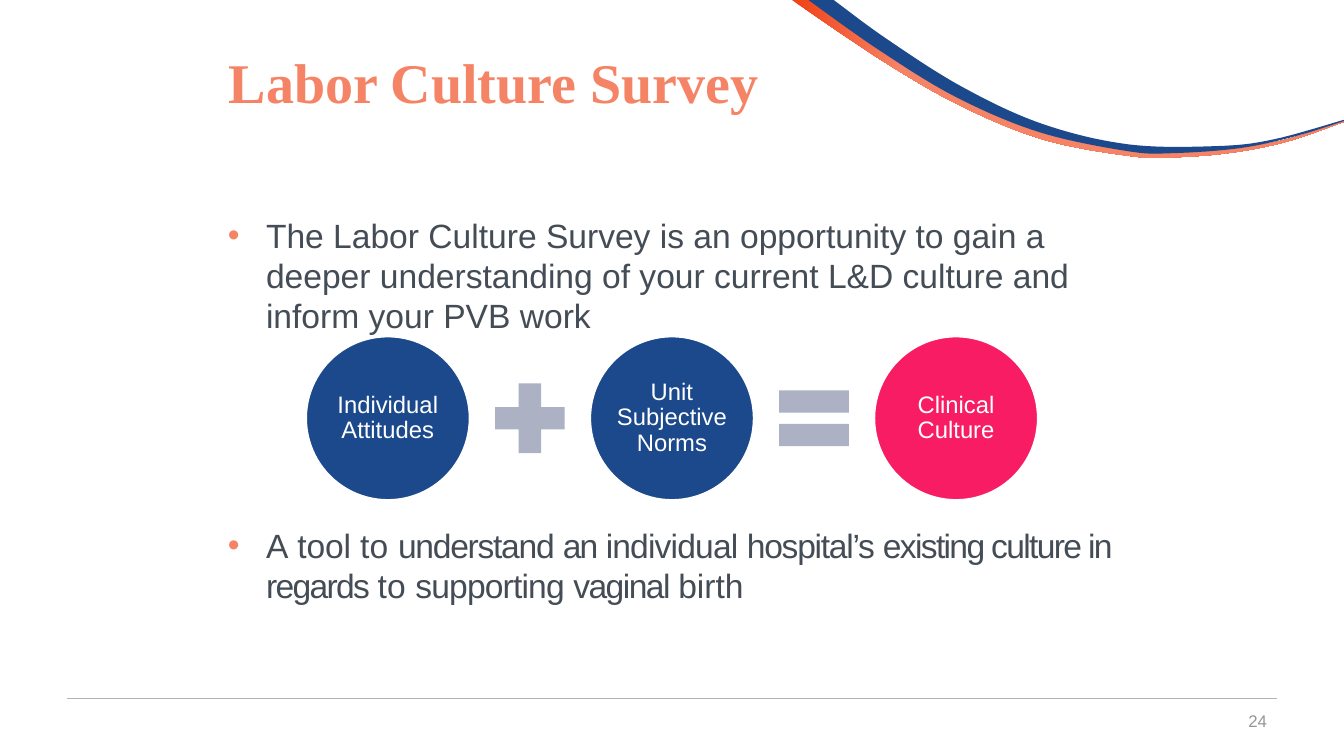
from dataclasses import dataclass

from lxml.etree import SubElement
from pptx import Presentation
from pptx.dml.color import RGBColor
from pptx.enum.shapes import MSO_CONNECTOR, MSO_SHAPE
from pptx.enum.text import MSO_ANCHOR, MSO_AUTO_SIZE, PP_ALIGN
from pptx.oxml.ns import qn
from pptx.util import Cm, Pt


@dataclass(frozen=True)
class Theme:
    coral: str = "F58466"
    flame: str = "F04115"
    navy: str = "1C498B"
    pink: str = "F71C64"
    operator: str = "ACB1C4"
    ink: str = "444C55"
    rule: str = "AFB3B9"
    page: str = "949699"
    white: str = "FFFFFF"
    serif: str = "Times New Roman"
    sans: str = "Arial"
    title_size: int = 40
    body_size: int = 24
    circle_size: int = 17
    page_size: int = 12


@dataclass(frozen=True)
class Part:
    """One item of the equation row."""
    kind: MSO_SHAPE
    size: float
    color: str
    text: str = ""


@dataclass(frozen=True)
class Ribbon:
    """A band between two smooth edges, in centimetres."""
    upper: list
    lower: list
    colors: tuple


T = Theme()
CIRCLE, SIGN, GAP = 4.11, 2.39, 0.33
ROW_LEFT, ROW_MIDDLE = 7.72, 10.54

EQUATION = [
    Part(MSO_SHAPE.OVAL, CIRCLE, T.navy, "Individual Attitudes"),
    Part(MSO_SHAPE.MATH_PLUS, SIGN, T.operator),
    Part(MSO_SHAPE.OVAL, CIRCLE, T.navy, "Unit Subjective Norms"),
    Part(MSO_SHAPE.MATH_EQUAL, SIGN, T.operator),
    Part(MSO_SHAPE.OVAL, CIRCLE, T.pink, "Clinical Culture"),
]

RIBBONS = [
    Ribbon([(20.45, 0), (22.4, 1.37), (24.33, 2.51), (26.39, 3.38), (28.57, 3.81),
            (29.67, 3.86), (31.06, 3.76), (32.44, 3.51), (33.87, 3.05)],
           [(33.87, 3.07), (32.46, 3.56), (31.09, 3.84), (29.69, 3.96), (28.55, 3.94),
            (26.34, 3.53), (24.26, 2.69), (22.3, 1.57), (19.96, 0)],
           (T.flame, T.coral)),
    Ribbon([(21.01, 0), (22.33, 0.97), (24.23, 2.18), (26.26, 3.12), (28.45, 3.64),
            (30.71, 3.68), (32.11, 3.51), (33.87, 3.02)],
           [(33.87, 3.05), (32.66, 3.43), (31.27, 3.73), (29.57, 3.86), (28.42, 3.81),
            (26.19, 3.33), (24.08, 2.44), (22.12, 1.24), (20.37, 0)],
           (T.navy,)),
]

# Each bullet is a list of (text, letter spacing in points).
BULLETS = [
    [("The Labor Culture Survey is an opportunity to gain a deeper understanding "
      "of your current L&D culture and inform your PVB work", 0)],
    [("A ", 0.5), ("tool ", -0.1), ("to ", 0.1), ("understand ", -0.9), ("an ", -1.3),
     ("individual ", -0.6), ("hospital’s ", -0.9), ("existing culture in regards ", -1.2),
     ("to ", 0.1), ("supporting ", -0.6), ("vaginal ", -1.1), ("birth", 0)],
]


def rgb(color: str) -> RGBColor:
    return RGBColor.from_string(color)


def style(r, font: str, size: float, color: str, bold: bool = False) -> None:
    r.font.name, r.font.size, r.font.bold = font, Pt(size), bold
    r.font.color.rgb = rgb(color)


def place(sp, left: float, top: float, width: float, height: float) -> None:
    sp.left, sp.top, sp.width, sp.height = Cm(left), Cm(top), Cm(width), Cm(height)


def smooth(points: list, steps: int = 10) -> list:
    """Catmull-Rom curve through the points."""
    ends = [points[0], *points, points[-1]]
    curve = []
    for a, b, c, d in zip(ends, ends[1:], ends[2:], ends[3:]):
        for i in range(steps):
            t = i / steps
            curve.append(tuple(
                (2 * q + (r - p) * t + (2 * p - 5 * q + 4 * r - w) * t ** 2
                 + (3 * q - p - 3 * r + w) * t ** 3) / 2
                for p, q, r, w in zip(a, b, c, d)))
    return curve + [points[-1]]


def add_ribbon(s, ribbon: Ribbon) -> None:
    outline = [(Cm(x), Cm(y)) for x, y in smooth(ribbon.upper) + smooth(ribbon.lower)]
    builder = s.shapes.build_freeform(*outline[0])
    builder.add_line_segments(outline[1:], close=True)
    sp = builder.convert_to_shape()
    sp.shadow.inherit = False
    sp.line.fill.background()
    if len(ribbon.colors) == 1:
        sp.fill.solid()
        sp.fill.fore_color.rgb = rgb(ribbon.colors[0])
        return
    sp.fill.gradient()
    sp.fill.gradient_angle = 0
    for stop, color, position in zip(sp.fill.gradient_stops, ribbon.colors, (0, 0.2)):
        stop.color.rgb = rgb(color)
        stop.position = position


def add_rule(s) -> None:
    line = s.shapes.add_connector(MSO_CONNECTOR.STRAIGHT, Cm(1.7), Cm(17.6), Cm(32.18), Cm(17.6))
    line.line.color.rgb = rgb(T.rule)
    line.line.width = Pt(0.5)
    SubElement(line._element.spPr, qn("a:effectLst"))


def add_page_number(s, number: str) -> None:
    sp = s.shapes.add_textbox(Cm(24.56), Cm(17.65), Cm(7.62), Cm(1.02))
    tf = sp.text_frame
    tf.word_wrap, tf.vertical_anchor = True, MSO_ANCHOR.MIDDLE
    tf.text = number
    tf.paragraphs[0].alignment = PP_ALIGN.RIGHT
    style(tf.paragraphs[0].runs[0], T.sans, T.page_size, T.page)


def fill_title(sp) -> None:
    place(sp, 5.51, 1.07, 16.94, 3.18)
    tf = sp.text_frame
    tf.text = "Labor Culture Survey"
    tf.auto_size, tf.vertical_anchor = MSO_AUTO_SIZE.NONE, MSO_ANCHOR.TOP
    tf.paragraphs[0].alignment = PP_ALIGN.LEFT
    style(tf.paragraphs[0].runs[0], T.serif, T.title_size, T.coral, bold=True)


def add_bullet(p) -> None:
    pPr = p._p.get_or_add_pPr()
    pPr.set("marL", str(Cm(0.96)))
    pPr.set("indent", str(-Cm(0.96)))
    SubElement(SubElement(pPr, qn("a:buClr")), qn("a:srgbClr")).set("val", T.coral)
    SubElement(pPr, qn("a:buFont")).set("typeface", T.sans)
    SubElement(pPr, qn("a:buChar")).set("char", "•")


def fill_body(sp) -> None:
    place(sp, 5.49, 5.28, 22.86, 12.57)
    tf = sp.text_frame
    tf.auto_size, tf.vertical_anchor = MSO_AUTO_SIZE.NONE, MSO_ANCHOR.TOP
    for i, pieces in enumerate(BULLETS):
        p = tf.add_paragraph() if i else tf.paragraphs[0]
        add_bullet(p)
        p.line_spacing = 1.0
        p.space_before = Pt(135 if i else 0)  # leaves room for the equation row
        for text, spacing in pieces:
            r = p.add_run()
            r.text = text
            style(r, T.sans, T.body_size, T.ink)
            if spacing:
                r._r.get_or_add_rPr().set("spc", str(round(spacing * 100)))


def add_part(s, part: Part, left: float) -> None:
    sp = s.shapes.add_shape(part.kind, Cm(left), Cm(ROW_MIDDLE - part.size / 2),
                            Cm(part.size), Cm(part.size))
    sp.shadow.inherit = False
    sp.fill.solid()
    sp.fill.fore_color.rgb = rgb(part.color)
    if not part.text:
        sp.line.fill.background()
        return
    sp.line.color.rgb = rgb(T.white)
    sp.line.width = Pt(1)
    tf = sp.text_frame
    tf.margin_left = tf.margin_right = tf.margin_top = tf.margin_bottom = Cm(0.05)
    tf.word_wrap, tf.vertical_anchor = True, MSO_ANCHOR.MIDDLE
    tf.text = part.text
    p = tf.paragraphs[0]
    p.alignment, p.line_spacing = PP_ALIGN.CENTER, 0.9
    style(p.runs[0], T.sans, T.circle_size, T.white)


def main() -> None:
    prs = Presentation()
    prs.slide_width, prs.slide_height = Cm(33.87), Cm(19.05)
    s = prs.slides.add_slide(prs.slide_layouts[1])
    fill_title(s.shapes.title)
    fill_body(s.placeholders[1])
    add_rule(s)
    for ribbon in RIBBONS:
        add_ribbon(s, ribbon)
    add_page_number(s, "24")
    left = ROW_LEFT
    for part in EQUATION:
        add_part(s, part, left)
        left += part.size + GAP
    prs.save("out.pptx")


if __name__ == "__main__":
    main()
